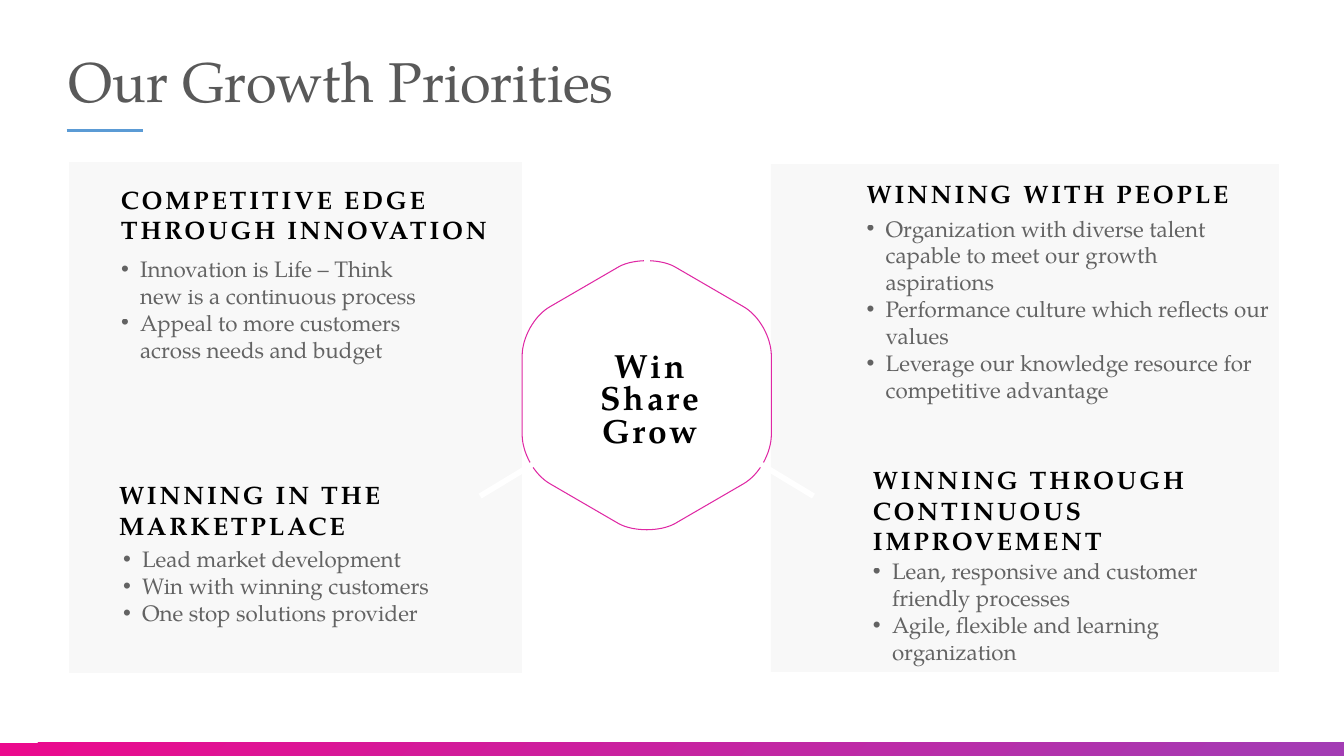
from lxml import etree
from pptx import Presentation
from pptx import util as u
from pptx.dml import color
from pptx.enum import dml, shapes, text
from pptx.oxml import ns

FACE = "TeX Gyre Pagella"
HUB = (16.3, 9.96)

# Heading box, heading line spacing, heading, list box, list items
TOPICS = [
    ((21.84, 4.65, 10.39, 0.61), 0.8, "WINNING WITH PEOPLE",
     (21.84, 5.28, 10.39, 5.05),
     ["Organization with diverse talent capable to meet our growth aspirations",
      "Performance culture which reflects our values",
      "Leverage our knowledge resource for competitive advantage"]),
    ((22, 11.71, 10.24, 2.31), 1, "WINNING THROUGH CONTINUOUS IMPROVEMENT",
     (22, 13.92, 10.24, 3),
     ["Lean, responsive and customer friendly processes",
      "Agile, flexible and learning organization"]),
    ((3.05, 4.65, 9.5, 1.55), 1, "COMPETITIVE EDGE THROUGH INNOVATION",
     (3.05, 6.3, 8.15, 3),
     ["Innovation is Life – Think new is a continuous process",
      "Appeal to more customers across needs and budget"]),
    ((3, 12.09, 6.91, 1.55), 1, "WINNING IN THE MARKETPLACE",
     (3.1, 13.61, 8.6, 2.31),
     ["Lead market development", "Win with winning customers",
      "One stop solutions provider"]),
]


def rgb(code):
    return color.RGBColor.from_string(code)


def place(shape, box):
    shape.left, shape.top, shape.width, shape.height = map(u.Cm, box)


def style(para, size, code, bold=False, track=0, alpha=None):
    for run in para.runs:
        font = run.font
        font.name, font.size, font.bold = FACE, u.Pt(size), bold
        font.color.rgb = rgb(code)
        props = run._r.get_or_add_rPr()
        if track:
            props.set("spc", str(track * 100))
        if alpha:
            tint = props.find(".//" + ns.qn("a:srgbClr"))
            etree.SubElement(tint, ns.qn("a:alpha"), val=str(alpha * 1000))


def frame(shape, pads):
    body = shape.text_frame
    body.word_wrap = True
    body.auto_size = text.MSO_AUTO_SIZE.SHAPE_TO_FIT_TEXT
    body.vertical_anchor = text.MSO_ANCHOR.TOP
    (body.margin_left, body.margin_top,
     body.margin_right, body.margin_bottom) = map(u.Cm, pads)
    return body


def block(slide, box):
    shape = slide.shapes.add_shape(shapes.MSO_SHAPE.RECTANGLE, *map(u.Cm, box))
    shape.shadow.inherit = False
    shape.line.fill.background()
    return shape


def panel(slide, box):
    fill = block(slide, box).fill
    fill.patterned()
    fill.pattern = dml.MSO_PATTERN.DARK_HORIZONTAL
    fill.fore_color.rgb = rgb("F8F8F8")
    fill.back_color.rgb = rgb("FFFFFF")


def band(slide, box, codes):
    fill = block(slide, box).fill
    fill.gradient()
    fill.gradient_angle = 315
    for stop, code, spot in zip(fill.gradient_stops, codes, (0, 1)):
        stop.color.rgb = rgb(code)
        stop.position = spot


def line(slide, start, end, code, width):
    link = slide.shapes.add_connector(
        shapes.MSO_CONNECTOR.STRAIGHT, *map(u.Cm, start + end))
    link.line.color.rgb = rgb(code)
    link.line.width = u.Pt(width)
    etree.SubElement(link._element.spPr, ns.qn("a:effectLst"))


def curve(pts, steps=16):
    for i in range(steps + 1):
        t = i / steps
        mix = ((1 - t) ** 3, 3 * t * (1 - t) ** 2, 3 * t * t * (1 - t), t ** 3)
        yield tuple(sum(m * p[k] for m, p in zip(mix, pts)) for k in (0, 1))


def hexagon(slide):
    # Two rounded corners; the other four follow by symmetry
    side = [(-3.14, -0.99), (-3.14, -1.45), (-2.84, -2), (-2.44, -2.23)]
    top = [(-0.7, -3.24), (-0.33, -3.44), (0.33, -3.44), (0.7, -3.24)]
    half = [side, top, [(-x, y) for x, y in reversed(side)]]
    turn = [[(-x, -y) for x, y in corner] for corner in half]
    pts = [(u.Cm(HUB[0] + x), u.Cm(HUB[1] + y))
           for corner in half + turn for x, y in curve(corner)]
    path = slide.shapes.build_freeform(*pts[0])
    path.add_line_segments(pts[1:], close=True)
    shape = path.convert_to_shape()
    shape.shadow.inherit = False
    shape.fill.solid()
    shape.fill.fore_color.rgb = rgb("FFFFFF")
    shape.line.color.rgb = rgb("DF28A4")
    shape.line.width = u.Pt(0.75)


def label(slide, box, words, size, gap, align):
    body = frame(slide.shapes.add_textbox(*map(u.Cm, box)), (0, 0, 0, 0))
    body.text = words
    for para in body.paragraphs:
        para.alignment, para.line_spacing = align, gap
        style(para, size, "000000", bold=True, track=2)


def bullets(slide, holder, box, items):
    place(holder, box)
    slide.shapes._spTree.append(holder._element)  # bring above the panels
    body = frame(holder, (0, 0.13, 0.25, 0.13))
    body.text = "\n".join(items)
    for para in body.paragraphs:
        props = para._p.get_or_add_pPr()
        props.set("marL", str(u.Cm(0.48)))
        props.set("indent", str(-u.Cm(0.48)))
        etree.SubElement(props, ns.qn("a:buFont"), typeface="Arial")
        etree.SubElement(props, ns.qn("a:buChar"), char="•")
        para.space_before = para.space_after = u.Pt(0)
        para.line_spacing = 1
        para.alignment = text.PP_ALIGN.LEFT
        style(para, 16, "000000", alpha=60)


def heading(slide, words):
    title = slide.shapes.title
    place(title, (1.47, 1.3, 25.73, 1.65))
    body = title.text_frame
    body.text = words
    body.word_wrap = True
    body.auto_size = text.MSO_AUTO_SIZE.NONE
    body.vertical_anchor = text.MSO_ANCHOR.MIDDLE
    para = body.paragraphs[0]
    para.alignment, para.line_spacing = text.PP_ALIGN.LEFT, 0.9
    style(para, 40, "595959")


def main():
    deck = Presentation()
    deck.slide_width, deck.slide_height = u.Cm(33.87), u.Cm(19.05)
    slide = deck.slides.add_slide(deck.slide_layouts[4])
    holders = [h for h in slide.placeholders if h.placeholder_format.idx]

    # Title and backdrop
    heading(slide, "Our Growth Priorities")
    line(slide, (1.68, 3.28), (3.61, 3.28), "5B9BD5", 2)
    band(slide, (0, 18.72, 33.87, 0.33), ("EB0A8D", "A33CB4"))
    panel(slide, (19.43, 4.11, 12.8, 12.8))
    panel(slide, (1.75, 4.06, 11.4, 12.88))

    # Hub with its three spokes
    hexagon(slide)
    for end in ((16.3, 5.05), (20.5, 12.5), (12.1, 12.5)):
        line(slide, HUB, end, "FFFFFF", 4)
    label(slide, (13.94, 8.89, 4.88, 2.46), "Win\nShare\nGrow", 24, 0.8,
          text.PP_ALIGN.CENTER)

    # Four priorities
    for holder, (top, gap, words, box, items) in zip(holders, TOPICS):
        bullets(slide, holder, box, items)
        label(slide, top, words, 18, gap, text.PP_ALIGN.LEFT)

    deck.save("out.pptx")


if __name__ == "__main__":
    main()
